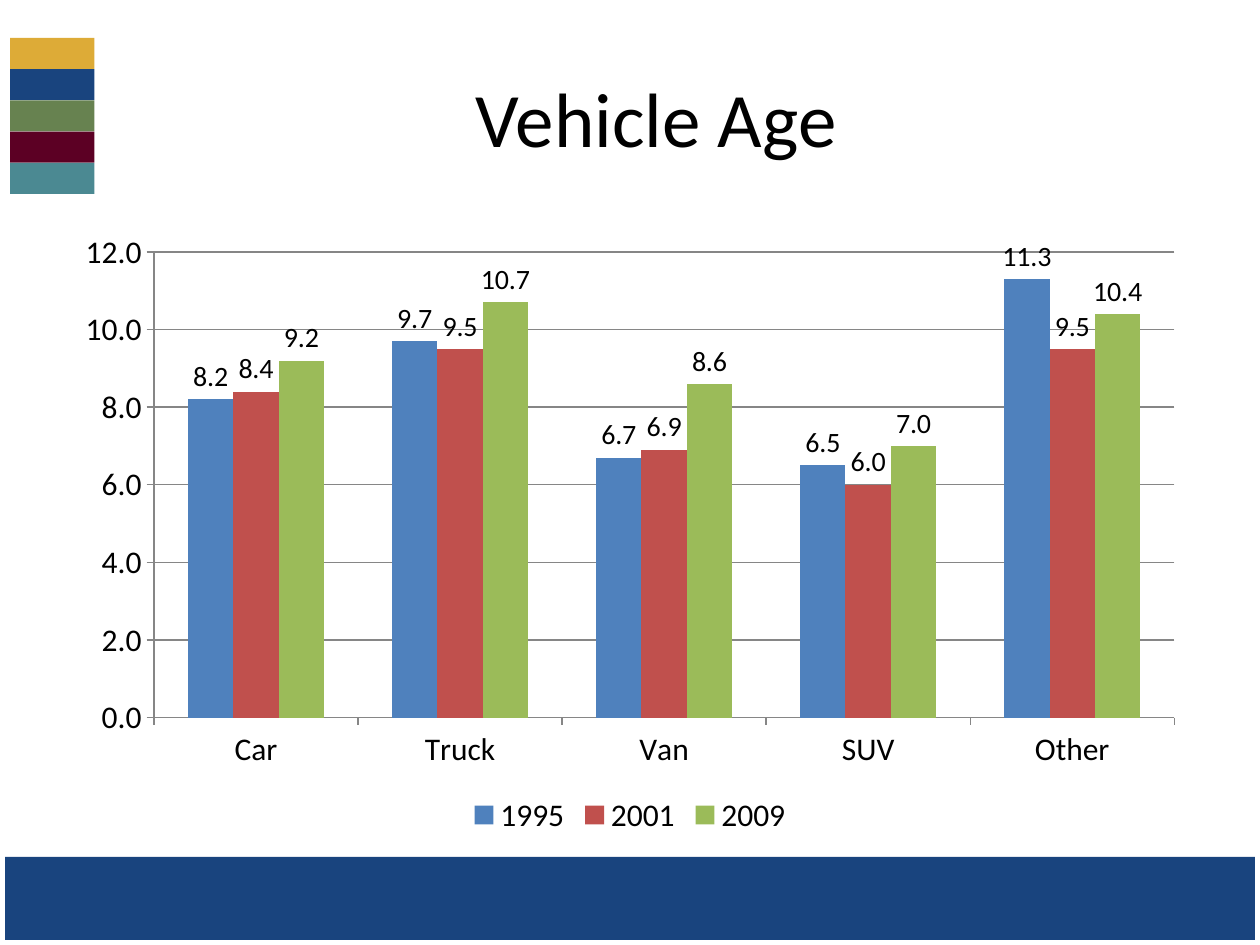
from dataclasses import dataclass

from pptx import Presentation
from pptx.chart.data import CategoryChartData
from pptx.dml.color import RGBColor
from pptx.enum.chart import XL_CHART_TYPE, XL_LABEL_POSITION, XL_LEGEND_POSITION, XL_TICK_MARK
from pptx.enum.shapes import MSO_SHAPE
from pptx.enum.text import MSO_ANCHOR, PP_ALIGN
from pptx.util import Inches, Pt

RECT = MSO_SHAPE.RECTANGLE
COLUMN = XL_CHART_TYPE.COLUMN_CLUSTERED
BOTTOM = XL_LEGEND_POSITION.BOTTOM
ABOVE = XL_LABEL_POSITION.OUTSIDE_END
TICK_OUT = XL_TICK_MARK.OUTSIDE
TICK_NONE = XL_TICK_MARK.NONE
MIDDLE = MSO_ANCHOR.MIDDLE
CENTER = PP_ALIGN.CENTER


@dataclass(frozen=True)
class Theme:
    """Hold the colours and type sizes of the slide."""
    face: str = "Calibri"
    text: str = "000000"
    paper: str = "FFFFFF"
    navy: str = "19447E"
    axis: str = "868686"
    bands: tuple = ("DDAB37", "19447E", "678250", "5C0024", "4B8992")
    bars: tuple = ("4F81BD", "C0504D", "9BBB59")
    title: int = 44
    body: int = 18
    label: int = 16


THEME = Theme()
TYPES = ("Car", "Truck", "Van", "SUV", "Other")
AGES = {
    "1995": (8.2, 9.7, 6.7, 6.5, 11.3),
    "2001": (8.4, 9.5, 6.9, 6.0, 9.5),
    "2009": (9.2, 10.7, 8.6, 7.0, 10.4),
}


def style(item, **values):
    """Set each named attribute on an item."""
    for name, value in values.items():
        setattr(item, name, value)


def set_font(font, size):
    """Apply the theme face and text colour at a size."""
    style(font, name=THEME.face, size=Pt(size), bold=False)
    font.color.rgb = RGBColor.from_string(THEME.text)


def add_rect(slide, box, color):
    """Add a filled rectangle without outline or shadow."""
    shape = slide.shapes.add_shape(RECT, *map(Inches, box))
    shape.shadow.inherit = False
    shape.fill.solid()
    shape.fill.fore_color.rgb = RGBColor.from_string(color)
    shape.line.fill.background()
    return shape


def add_bands(slide, box):
    """Stack the colour bands in equal heights."""
    left, top, width, height = box
    step = height / len(THEME.bands)
    for row, color in enumerate(THEME.bands):
        add_rect(slide, (left, top + row * step, width, step), color)


def add_frame(slide, box):
    """Outline the slide edge."""
    frame = add_rect(slide, box, THEME.paper)
    frame.fill.background()
    frame.line.color.rgb = RGBColor.from_string(THEME.paper)
    frame.line.width = Pt(6)


def set_title(slide, box, text):
    """Place and format the title."""
    title = slide.shapes.title
    left, top, width, height = map(Inches, box)
    style(title, left=left, top=top, width=width, height=height)
    frame = title.text_frame
    style(frame, text=text, vertical_anchor=MIDDLE, word_wrap=True)
    line = frame.paragraphs[0]
    line.alignment = CENTER
    set_font(line.runs[0].font, THEME.title)


def style_axes(chart):
    """Format both axes and the grid."""
    value = chart.value_axis
    style(value, minimum_scale=0, maximum_scale=12, major_unit=2, has_major_gridlines=True)
    style(value.tick_labels, number_format="0.0", number_format_is_linked=False)
    for axis in (chart.category_axis, value):
        style(axis, major_tick_mark=TICK_OUT, minor_tick_mark=TICK_NONE)
        set_font(axis.tick_labels.font, THEME.body)
    for part in (chart.category_axis, value, value.major_gridlines):
        part.format.line.color.rgb = RGBColor.from_string(THEME.axis)
        part.format.line.width = Pt(0.75)


def add_ages(slide, box):
    """Add the column chart of vehicle ages."""
    data = CategoryChartData(number_format="0.0")
    data.categories = TYPES
    for year, ages in AGES.items():
        data.add_series(year, ages)
    chart = slide.shapes.add_chart(COLUMN, *map(Inches, box), data).chart
    style(chart, has_title=False, has_legend=True)
    set_font(chart.font, THEME.body)
    style(chart.legend, position=BOTTOM, include_in_layout=False)
    set_font(chart.legend.font, THEME.body)
    style_axes(chart)
    plot = chart.plots[0]
    style(plot, gap_width=150, overlap=0, vary_by_categories=False)
    for series, color in zip(plot.series, THEME.bars):
        series.format.fill.solid()
        series.format.fill.fore_color.rgb = RGBColor.from_string(color)
        labels = series.data_labels
        style(labels, show_value=True, position=ABOVE,
              number_format="0.0", number_format_is_linked=False)
        set_font(labels.font, THEME.label)


def main():
    """Build and save the slide."""
    deck = Presentation()
    style(deck, slide_width=Inches(10), slide_height=Inches(7.5))
    slide = deck.slides.add_slide(deck.slide_layouts[5])
    add_rect(slide, (0, 6.8, 10, 0.7), THEME.navy)
    add_bands(slide, (0.08, 0.3, 0.67, 1.24))
    add_frame(slide, (0, 0, 10, 7.5))
    set_title(slide, (0.92, 0.3, 8.58, 1.25), "Vehicle Age")
    add_ages(slide, (0.5, 1.75, 9, 4.92))
    deck.save("out.pptx")


if __name__ == "__main__":
    main()
